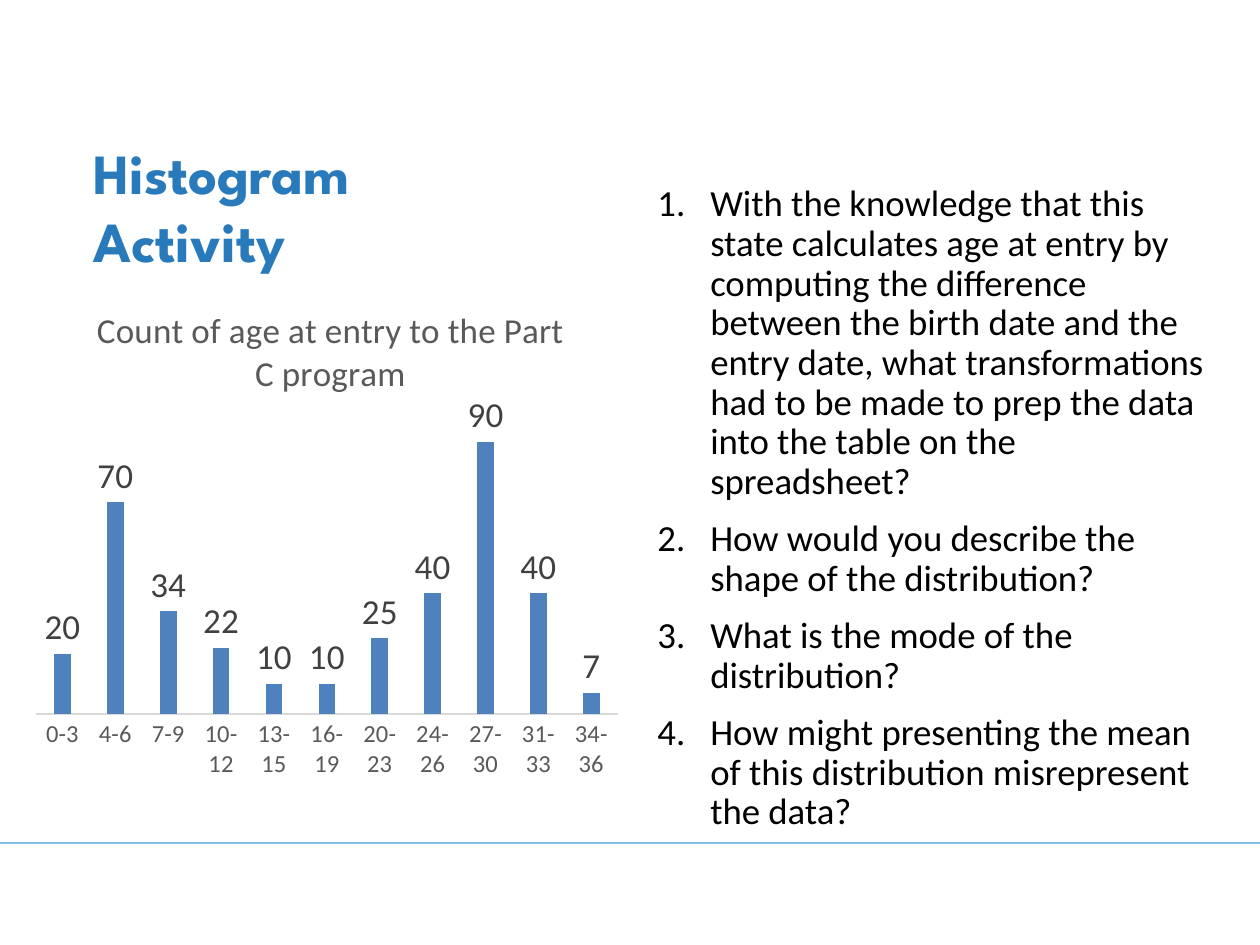
"""Build the histogram activity slide: title, column chart and numbered questions."""
from dataclasses import dataclass

from lxml import etree
from pptx import Presentation
from pptx import util as u
from pptx.chart import data
from pptx.dml.color import RGBColor
from pptx.enum import chart as ch
from pptx.enum import shapes, text
from pptx.oxml import parse_xml
from pptx.oxml.ns import nsdecls, qn

COLORS = {
    "title": "297ABB", "rule": "7FBCE7", "body": "000000", "bar": "4F81BD",
    "muted": "595959", "label": "404040", "axis": "D9D9D9",
}
AGE_COUNTS = {
    "0-3": 20, "4-6": 70, "7-9": 34, "10-12": 22, "13-15": 10, "16-19": 10,
    "20-23": 25, "24-26": 40, "27-30": 90, "31-33": 40, "34-36": 7,
}
QUESTIONS = [
    "With the knowledge that this state calculates age at entry by computing "
    "the difference between the birth date and the entry date, what "
    "transformations had to be made to prep the data into the table on the "
    "spreadsheet?",
    "How would you describe the shape of the distribution?",
    "What is the mode of the distribution?",
    "How might presenting the mean of this distribution misrepresent the data?",
]


@dataclass(frozen=True)
class Box:
    """A rectangle in points."""
    left: float
    top: float
    width: float
    height: float

    def lengths(self) -> tuple:
        """Return the four lengths for python-pptx."""
        return tuple(u.Pt(v) for v in (self.left, self.top, self.width, self.height))


@dataclass(frozen=True)
class Style:
    """How a piece of text looks."""
    size: float
    color: str
    face: str = "Calibri"
    bold: bool = False

    def apply(self, font) -> None:
        """Format a font."""
        font.size, font.name, font.bold = u.Pt(self.size), self.face, self.bold
        font.color.rgb = rgb(self.color)


def rgb(name: str) -> RGBColor:
    """Look up a named colour."""
    return RGBColor.from_string(COLORS[name])


def add_rule(slide, y: float, width: float) -> None:
    """Draw the horizontal rule across the slide."""
    rule = slide.shapes.add_connector(
        shapes.MSO_CONNECTOR.STRAIGHT, u.Pt(0), u.Pt(y), u.Pt(width), u.Pt(y))
    rule.line.color.rgb = rgb("rule")
    rule.line.width = u.Pt(1.5)
    etree.SubElement(rule._element.spPr, qn("a:effectLst"))


def set_title(slide, wording: str, box: Box, style: Style) -> None:
    """Fill and place the title placeholder."""
    heading = slide.shapes.title
    heading.left, heading.top, heading.width, heading.height = box.lengths()
    frame = heading.text_frame
    frame.text = wording
    frame.auto_size = text.MSO_AUTO_SIZE.NONE
    frame.vertical_anchor = text.MSO_ANCHOR.MIDDLE
    frame.paragraphs[0].alignment = text.PP_ALIGN.LEFT
    style.apply(frame.paragraphs[0].runs[0].font)


def set_layout(element, **fractions: float) -> None:
    """Place a chart title or plot area by fractions of the chart."""
    for old in element.findall(qn("c:layout")):
        element.remove(old)
    inner = '<c:layoutTarget val="inner"/>' if "w" in fractions else ""
    modes = "".join(f'<c:{k}Mode val="edge"/>' for k in "xy")
    values = "".join(f'<c:{k} val="{v}"/>' for k, v in fractions.items())
    layout = parse_xml(
        f'<c:layout {nsdecls("c")}><c:manualLayout>{inner}{modes}{values}'
        "</c:manualLayout></c:layout>")
    rich_text = element.find(qn("c:tx"))
    if rich_text is None:
        element.insert(0, layout)
    else:
        rich_text.addnext(layout)


def add_histogram(slide, box: Box) -> None:
    """Add the chart of counts by age group."""
    counts = data.CategoryChartData()
    counts.categories = list(AGE_COUNTS)
    counts.add_series("Series 1", list(AGE_COUNTS.values()))
    histogram = slide.shapes.add_chart(
        ch.XL_CHART_TYPE.COLUMN_CLUSTERED, *box.lengths(), counts).chart
    Style(10, "body").apply(histogram.font)
    histogram.has_legend = False

    caption = histogram.chart_title
    caption.text_frame.text = "Count of age at entry to the Part C program"
    Style(20, "muted").apply(caption.text_frame.paragraphs[0].runs[0].font)
    caption.include_in_layout = False
    set_layout(caption._element, x=0.11, y=0.05)

    ages = histogram.category_axis
    ages.major_tick_mark = ch.XL_TICK_MARK.NONE
    ages.format.line.color.rgb = rgb("axis")
    ages.format.line.width = u.Pt(0.75)
    Style(14, "muted").apply(ages.tick_labels.font)
    scale = histogram.value_axis
    scale.minimum_scale, scale.maximum_scale = 0, 100
    scale.has_major_gridlines = False
    scale.visible = False

    plot = histogram.plots[0]
    plot.gap_width, plot.overlap, plot.vary_by_categories = 219, -27, False
    bars = plot.series[0]
    bars.format.fill.solid()
    bars.format.fill.fore_color.rgb = rgb("bar")
    labels = bars.data_labels
    labels.show_value = True
    labels.position = ch.XL_LABEL_POSITION.OUTSIDE_END
    Style(20, "label").apply(labels.font)
    set_layout(plot._element.getparent(), x=0.02, y=0.27, w=0.96, h=0.59)


def add_questions(slide, box: Box, style: Style, indent: float) -> None:
    """Add the numbered list of questions."""
    frame = slide.shapes.add_textbox(*box.lengths()).text_frame
    frame.word_wrap = True
    frame.text = "\n".join(QUESTIONS)
    for question in frame.paragraphs:
        question.line_spacing = 0.9
        question.space_before = u.Pt(10)
        style.apply(question.runs[0].font)
        properties = question._p.get_or_add_pPr()
        properties.set("marL", str(u.Pt(indent)))
        properties.set("indent", str(u.Pt(-indent)))
        etree.SubElement(properties, qn("a:buFont"), typeface="+mj-lt")
        etree.SubElement(properties, qn("a:buAutoNum"), type="arabicPeriod")


def main() -> None:
    """Build and save the slide."""
    deck = Presentation()
    deck.slide_width, deck.slide_height = u.Pt(720), u.Pt(540)
    slide = deck.slides.add_slide(deck.slide_layouts[5])
    add_rule(slide, 481.7, 720)
    set_title(slide, "Histogram Activity", Box(46, 78.5, 269, 78.5),
              Style(32.4, "title", "League Spartan", True))
    add_histogram(slide, Box(13.7, 156.2, 346.3, 293))
    add_questions(slide, Box(368.6, 102.2, 337.7, 353.5), Style(21, "body"), 30.2)
    deck.save("out.pptx")


if __name__ == "__main__":
    main()
